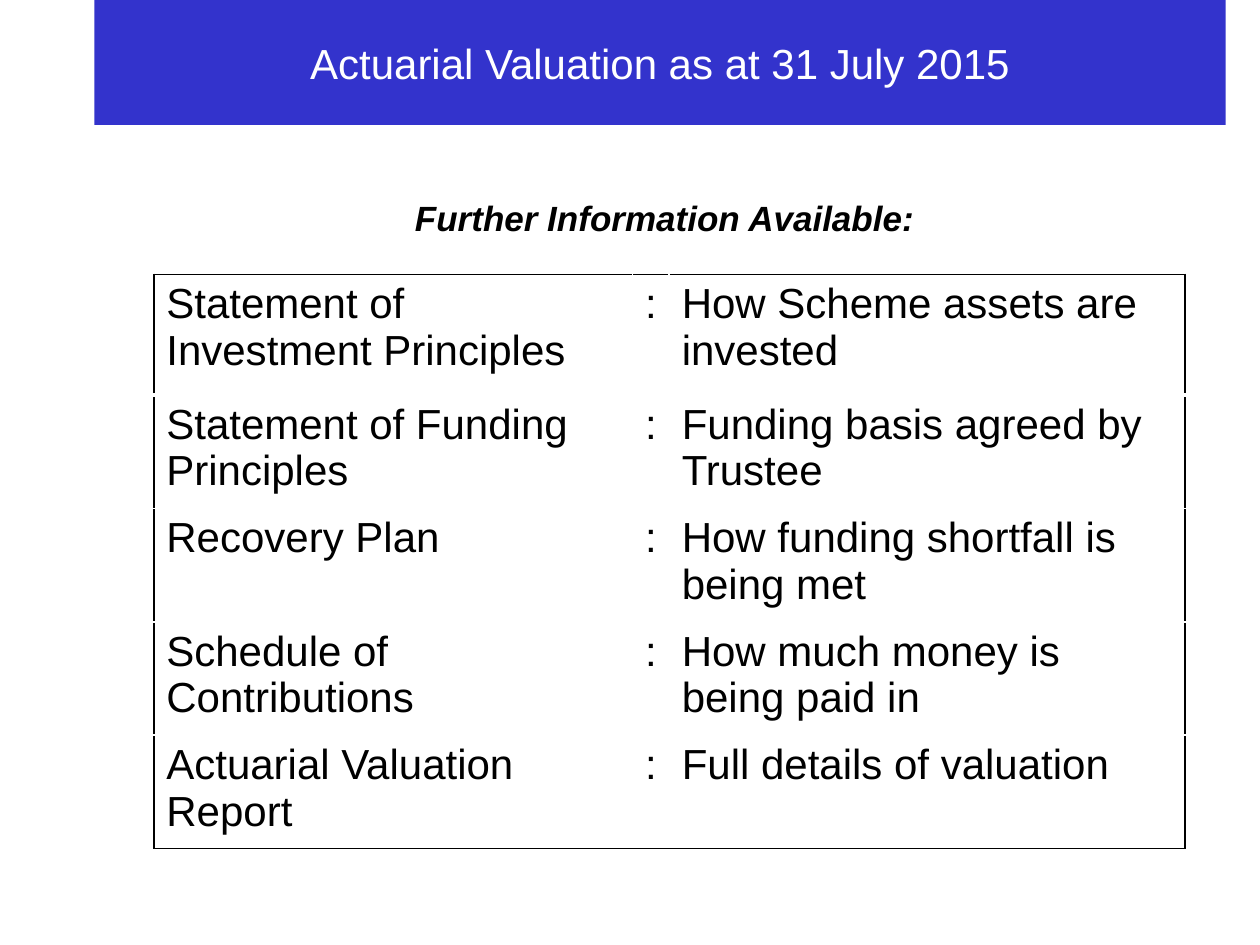
from typing import NamedTuple

from lxml.etree import SubElement
from pptx import Presentation
from pptx.dml.color import RGBColor
from pptx.enum.text import MSO_ANCHOR, PP_ALIGN
from pptx.oxml.ns import qn
from pptx.util import Cm, Pt

BLACK, WHITE, BLUE = "000000", "FFFFFF", "3333CC"


class Document(NamedTuple):
    name: str
    purpose: str


DOCUMENTS = [
    Document("Statement of Investment Principles", "How Scheme assets are invested"),
    Document("Statement of Funding Principles", "Funding basis agreed by Trustee"),
    Document("Recovery Plan", "How funding shortfall is being met"),
    Document("Schedule of Contributions", "How much money is being paid in"),
    Document("Actuarial Valuation Report", "Full details of valuation"),
]
COLUMN_WIDTHS = [9.65, 0.74, 10.4]
ROW_HEIGHTS = [2.43] + [2.28] * (len(DOCUMENTS) - 1)


def color(value: str) -> RGBColor:
    return RGBColor.from_string(value)


def write(frame, text: str, *, size=24, ink=BLACK, bold=False, italic=False,
          align=PP_ALIGN.LEFT, spacing=1.0) -> None:
    frame.word_wrap = True
    para = frame.paragraphs[0]
    para.alignment = align
    para.line_spacing = spacing
    span = para.add_run()
    span.text = text
    font = span.font
    font.name, font.size = "Arial", Pt(size)
    font.bold, font.italic = bold, italic
    font.color.rgb = color(ink)


def add_border(cell, side: str, ink: str, width: float) -> None:
    """Add one edge; sides must come in the order L, R, T, B, before the fill."""
    line = SubElement(cell._tc.get_or_add_tcPr(), qn(f"a:ln{side}"), w=str(Pt(width)))
    fill = SubElement(line, qn("a:solidFill"))
    SubElement(fill, qn("a:srgbClr"), val=ink)


def add_title(page) -> None:
    title = page.shapes.title
    title.left, title.top, title.width, title.height = Cm(1.9), Cm(0), Cm(22.81), Cm(2.52)
    title.fill.solid()
    title.fill.fore_color.rgb = color(BLUE)
    title.text_frame.vertical_anchor = MSO_ANCHOR.MIDDLE
    write(title.text_frame, "Actuarial Valuation as at 31 July 2015",
          ink=WHITE, align=PP_ALIGN.CENTER)


def add_heading(page) -> None:
    box = page.shapes.add_textbox(Cm(2.9), Cm(3.94), Cm(21), Cm(5.82))
    write(box.text_frame, "Further Information Available:", size=20,
          bold=True, italic=True, align=PP_ALIGN.CENTER, spacing=0.9)


def add_document_table(page, documents: list[Document]) -> None:
    """List the documents in a grid whose outer frame alone is black."""
    last_row, last_column = len(documents) - 1, len(COLUMN_WIDTHS) - 1
    table = page.shapes.add_table(
        len(documents), len(COLUMN_WIDTHS), Cm(3.1), Cm(5.53),
        Cm(sum(COLUMN_WIDTHS)), Cm(sum(ROW_HEIGHTS))).table
    table.first_row = table.horz_banding = False
    for column, width in zip(table.columns, COLUMN_WIDTHS):
        column.width = Cm(width)
    for row, height in zip(table.rows, ROW_HEIGHTS):
        row.height = Cm(height)

    for i, document in enumerate(documents):
        for j, text in enumerate((document.name, ":", document.purpose)):
            cell = table.cell(i, j)
            write(cell.text_frame, text)
            outer_edges = {"L": j == 0, "R": j == last_column,
                           "T": i == 0, "B": i == last_row}
            for side, outer in outer_edges.items():
                below_first = (i, side) in ((0, "B"), (1, "T"))
                add_border(cell, side, BLACK if outer else WHITE, 3 if below_first else 1)
            cell.fill.solid()
            cell.fill.fore_color.rgb = color(WHITE)


def main() -> None:
    deck = Presentation()
    deck.slide_width, deck.slide_height = Cm(25.4), Cm(19.05)
    page = deck.slides.add_slide(deck.slide_layouts[5])
    add_heading(page)
    add_document_table(page, DOCUMENTS)
    add_title(page)
    deck.save("out.pptx")


if __name__ == "__main__":
    main()
